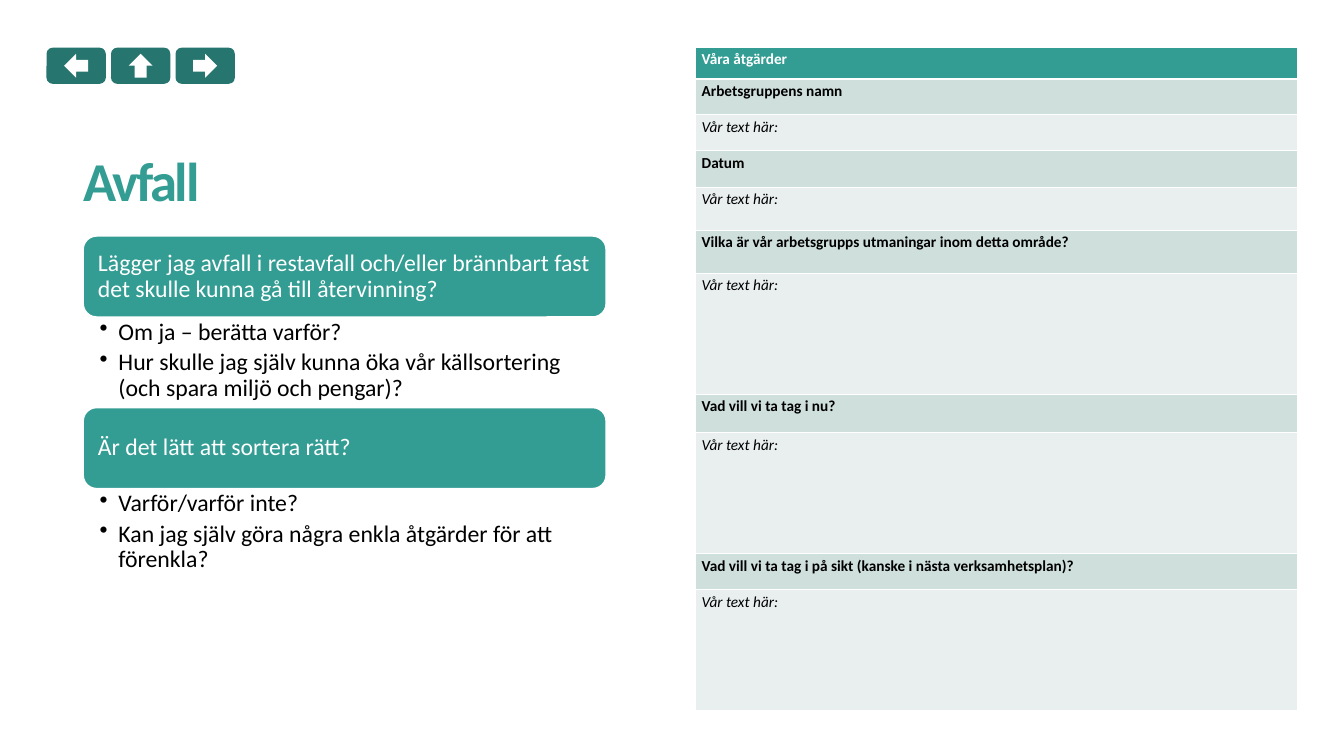
from pptx import Presentation
from pptx.dml.color import RGBColor
from pptx.enum.shapes import MSO_SHAPE
from pptx.enum.text import MSO_ANCHOR, PP_ALIGN
from pptx.oxml import parse_xml
from pptx.oxml.ns import nsdecls
from pptx.util import Inches, Pt

ROUNDED = MSO_SHAPE.ROUNDED_RECTANGLE
ARROW = MSO_SHAPE.RIGHT_ARROW
TOP, MIDDLE, BOTTOM = MSO_ANCHOR.TOP, MSO_ANCHOR.MIDDLE, MSO_ANCHOR.BOTTOM
LEFT = PP_ALIGN.LEFT

TEAL, DARK_TEAL = "339D94", "26766F"
HEADING_TINT, ANSWER_TINT = "CEDFDC", "E8EFEE"
WHITE, BLACK = "FFFFFF", "000000"

QUESTIONS = [
    ("Lägger jag avfall i restavfall och/eller brännbart fast det skulle kunna gå till återvinning?",
     ["Om ja – berätta varför?",
      "Hur skulle jag själv kunna öka vår källsortering (och spara miljö och pengar)?"]),
    ("Är det lätt att sortera rätt?",
     ["Varför/varför inte?",
      "Kan jag själv göra några enkla åtgärder för att förenkla?"]),
]
ANSWER = "Vår text här:"
# Heading, heading height and answer height, in percent of the slide height
ACTION_FIELDS = [
    ("Arbetsgruppens namn", 4.77, 4.77),
    ("Datum", 4.77, 5.74),
    ("Vilka är vår arbetsgrupps utmaningar inom detta område?", 5.66, 16),
    ("Vad vill vi ta tag i nu?", 5.09, 16),
    ("Vad vill vi ta tag i på sikt (kanske i nästa verksamhetsplan)?", 4.77, 16),
]


def color(hex_value):
    return RGBColor.from_string(hex_value)


class SlideBuilder:
    """Draws on one slide; lengths are percent of its width and height."""

    font = "Calibri"

    def __init__(self, prs):
        self.width, self.height = prs.slide_width, prs.slide_height
        self.slide = prs.slides.add_slide(prs.slide_layouts[6])
        self.shapes = self.slide.shapes

    def x(self, share):
        return round(self.width * share / 100)

    def y(self, share):
        return round(self.height * share / 100)

    def box(self, left, top, width, height):
        return self.x(left), self.y(top), self.x(width), self.y(height)

    def shape(self, kind, place, fill, outline=None, rotation=0):
        shape = self.shapes.add_shape(kind, *self.box(*place))
        shape.shadow.inherit = False
        shape.fill.solid()
        shape.fill.fore_color.rgb = color(fill)
        if outline:
            shape.line.color.rgb = color(outline)
            shape.line.width = Pt(2)
        else:
            shape.line.fill.background()
        shape.rotation = rotation
        return shape

    def text_box(self, place):
        return self.shapes.add_textbox(*self.box(*place))

    def frame(self, shape, insets, anchor=TOP):
        """Set insets (left, top, right, bottom in inches) and return the text frame."""
        frame = shape.text_frame
        frame.word_wrap = True
        frame.vertical_anchor = anchor
        (frame.margin_left, frame.margin_top,
         frame.margin_right, frame.margin_bottom) = map(Inches, insets)
        return frame

    def add_text(self, paragraph, text, size, ink, bold=False, italic=False, line_spacing=None):
        paragraph.alignment = LEFT
        paragraph.line_spacing = line_spacing
        run = paragraph.add_run()
        run.text = text
        run.font.name, run.font.size = self.font, Pt(size)
        run.font.bold, run.font.italic = bold, italic
        run.font.color.rgb = color(ink)
        return run

    def title(self, text, place):
        frame = self.frame(self.text_box(place), (0, 0, 0, 0.08), BOTTOM)
        run = self.add_text(frame.paragraphs[0], text, 64.5, TEAL, bold=True, line_spacing=0.85)
        run._r.get_or_add_rPr().set("spc", "-280")

    def card(self, text, place):
        card = self.shape(ROUNDED, place, TEAL, outline=WHITE)
        frame = self.frame(card, (0.18, 0.18, 0.18, 0.18), MIDDLE)
        self.add_text(frame.paragraphs[0], text, 28, WHITE, line_spacing=0.9)

    def bullets(self, items, place):
        frame = self.frame(self.text_box(place), (0.27, 0.04, 0.22, 0.04))
        for index, item in enumerate(items):
            paragraph = frame.add_paragraph() if index else frame.paragraphs[0]
            properties = paragraph._p.get_or_add_pPr()
            properties.set("marL", str(Inches(0.31)))
            properties.set("indent", str(-Inches(0.31)))
            properties.append(parse_xml(f'<a:buChar {nsdecls("a")} char="•"/>'))
            paragraph.space_after = Pt(5.6)
            self.add_text(paragraph, item, 28, BLACK, line_spacing=0.9)

    def nav_button(self, left, top, rotation):
        width, height, arrow = 4.41, 4.77, Inches(0.39)
        arrow_width, arrow_height = arrow / self.width * 100, arrow / self.height * 100
        self.shape(ROUNDED, (left, top, width, height), DARK_TEAL)
        self.shape(ARROW, (left + (width - arrow_width) / 2, top + (height - arrow_height) / 2,
                           arrow_width, arrow_height), WHITE, rotation=rotation)

    def cell_borders(self, cell, bottom):
        properties = cell._tc.get_or_add_tcPr()
        widths = {"lnL": 1, "lnR": 1, "lnT": 1, "lnB": bottom}
        for index, (side, points) in enumerate(widths.items()):
            properties.insert(index, parse_xml(
                f'<a:{side} {nsdecls("a")} w="{int(Pt(points))}"><a:solidFill>'
                f'<a:srgbClr val="{WHITE}"/></a:solidFill></a:{side}>'))

    def table(self, rows, left, top, width):
        """Each row is text, height, fill, ink, bold, italic."""
        total = sum(row[1] for row in rows)
        table = self.shapes.add_table(len(rows), 1, *self.box(left, top, width, total)).table
        for index, (text, height, fill, ink, bold, italic) in enumerate(rows):
            table.rows[index].height = self.y(height)
            cell = table.cell(index, 0)
            cell.fill.solid()
            cell.fill.fore_color.rgb = color(fill)
            self.cell_borders(cell, bottom=1 if index else 3)
            self.add_text(cell.text_frame.paragraphs[0], text, 18, ink, bold, italic)


def main():
    prs = Presentation()
    prs.slide_width, prs.slide_height = Inches(21.99), Inches(12.37)
    page = SlideBuilder(prs)

    text_left, text_width = 6.18, 38.93
    card_height, bullets_height = 10.75, 11.9
    for index, (question, prompts) in enumerate(QUESTIONS):
        top = 31.2 + index * 22.7
        page.card(question, (text_left, top, text_width, card_height))
        page.bullets(prompts, (text_left, top + card_height, text_width, bullets_height))
    page.title("Avfall", (text_left, 10.83, text_width, 18))

    for index, rotation in enumerate((180, 270, 0)):
        page.nav_button(3.46 + index * 4.8, 6.31, rotation)

    rows = [("Våra åtgärder", 4.2, TEAL, WHITE, True, False)]
    for heading, heading_height, answer_height in ACTION_FIELDS:
        rows.append((heading, heading_height, HEADING_TINT, BLACK, True, False))
        rows.append((ANSWER, answer_height, ANSWER_TINT, BLACK, False, True))
    page.table(rows, 51.75, 6.22, 44.79)

    prs.save("out.pptx")


if __name__ == "__main__":
    main()
